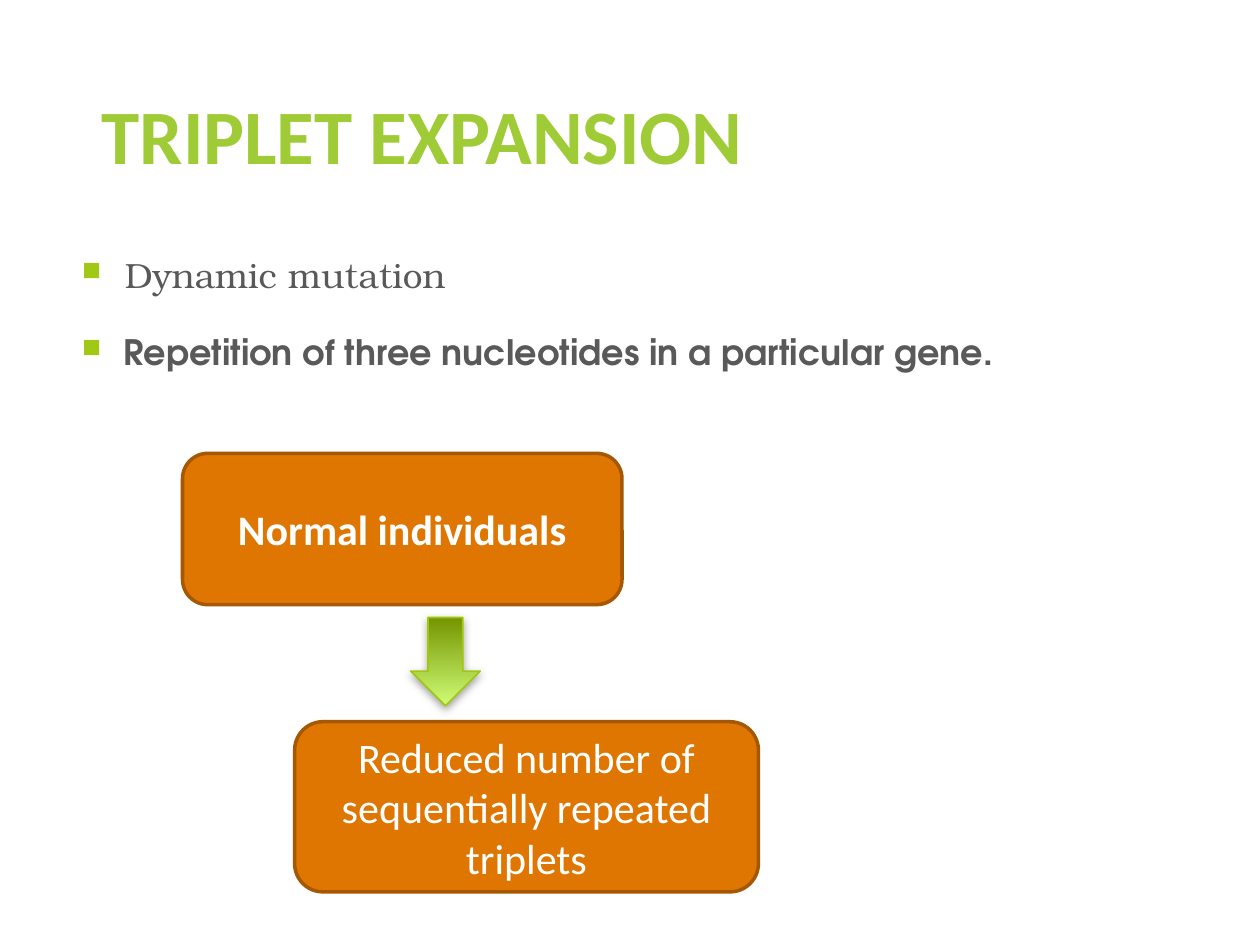
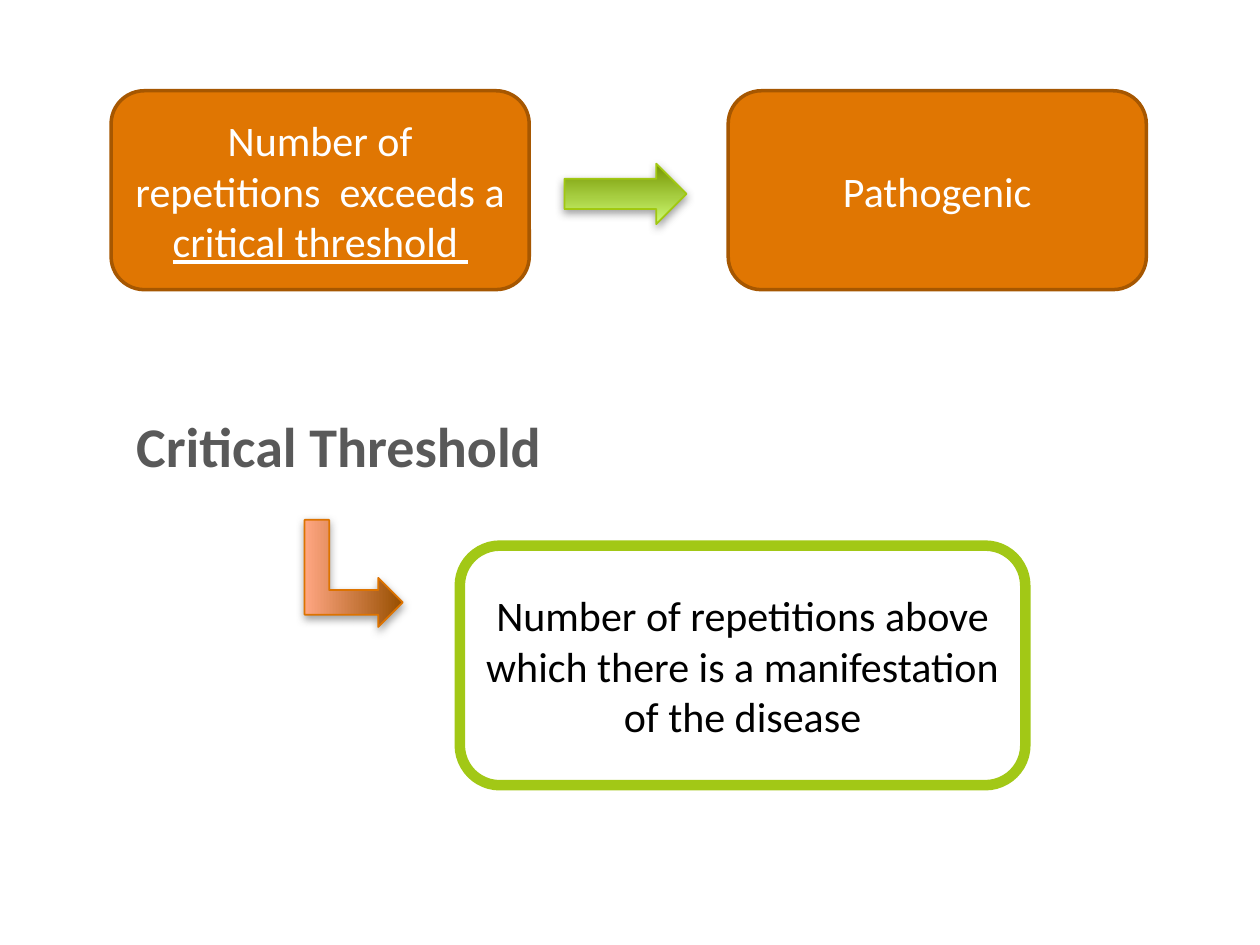
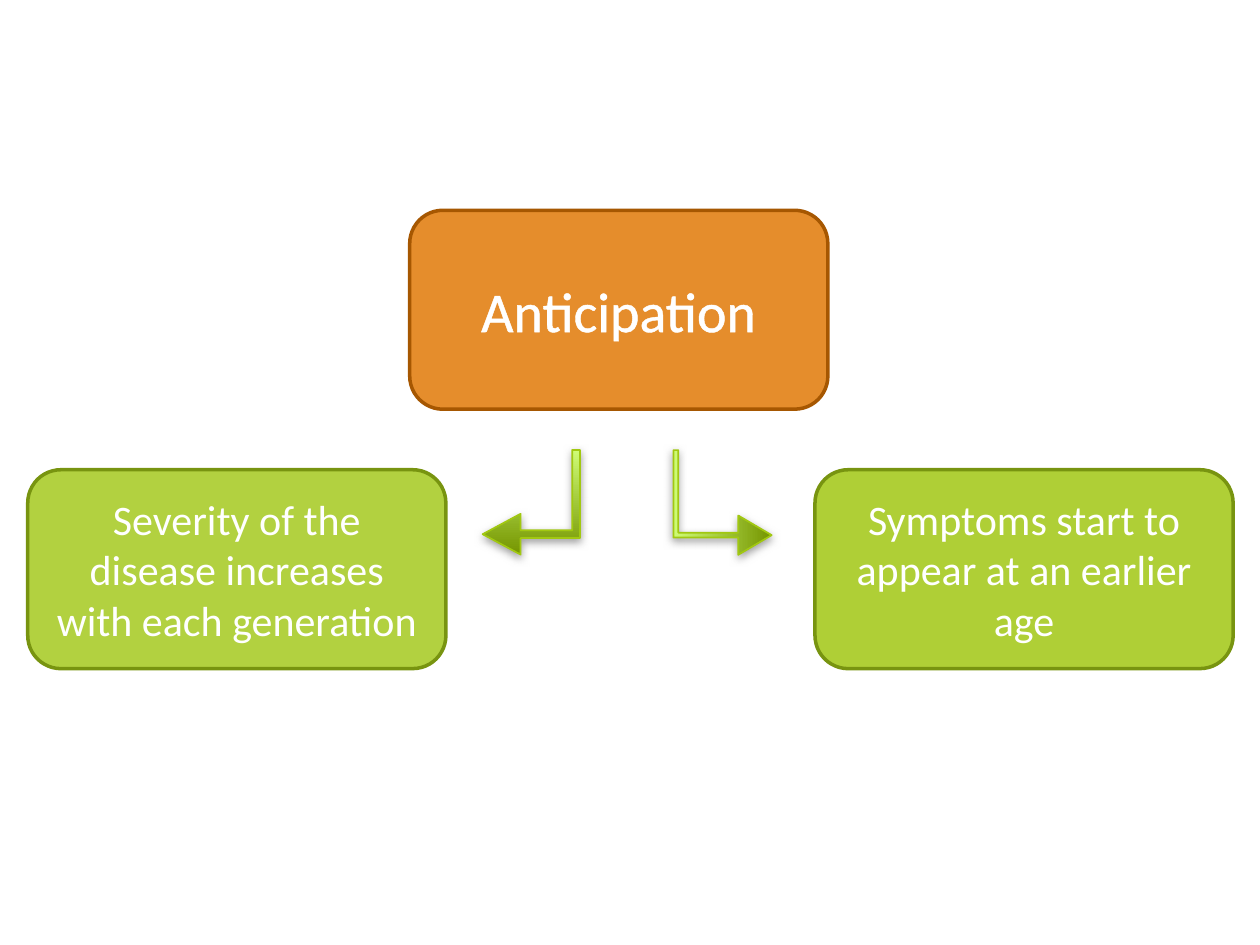
from pptx import Presentation
from pptx.dml.color import RGBColor
from pptx.enum.shapes import MSO_SHAPE
from pptx.enum.text import MSO_ANCHOR, PP_ALIGN
from pptx.oxml.ns import qn
from pptx.util import Cm, Pt
from lxml import etree

ROUND_BOX = MSO_SHAPE.ROUNDED_RECTANGLE
DOWN, RIGHT = MSO_SHAPE.DOWN_ARROW, MSO_SHAPE.RIGHT_ARROW
BENT, BENT_UP = MSO_SHAPE.BENT_ARROW, MSO_SHAPE.BENT_UP_ARROW
CENTER, MIDDLE = PP_ALIGN.CENTER, MSO_ANCHOR.MIDDLE

COLORS = {
    "title": "9FCC36", "body": "595959", "white": "FFFFFF", "black": "000000",
    "orange": "E07602", "orange_edge": "A65701",
    "green": "A2C816", "green_edge": "789410", "shadow": "808080",
}
# Arrow styles: gradient start, gradient end, outline
GREEN_ARROW = ("759500", "CFFC76", "A1C811")
ORANGE_ARROW = ("984F00", "FFA682", "DD7300")

FONT, SERIF, SANS = "Calibri", "TeX Gyre Bonum", "TeX Gyre Adventor"
BOX_W, BOX_H = 8.43, 4.01
TEXT_W = 20.98


def rgb(name):
    return RGBColor.from_string(COLORS.get(name, name))


def sub(parent, tag, **attrs):
    return etree.SubElement(parent, qn(tag), {k: str(v) for k, v in attrs.items()})


def add_run(p, text, size, color, font=FONT, bold=False, underline=False):
    r = p.add_run()
    r.text = text
    r.font.size = Pt(size)
    r.font.name = font
    r.font.bold = bold
    r.font.underline = underline
    r.font.color.rgb = rgb(color)
    return r


def add_text(s, x, y, w, h):
    """Add a wrapping text box and return its text frame."""
    tf = s.shapes.add_textbox(Cm(x), Cm(y), Cm(w), Cm(h)).text_frame
    tf.word_wrap = True
    return tf


def add_bullet(p):
    p.space_before = Pt(20)
    pPr = p._p.get_or_add_pPr()
    pPr.set("marL", str(Cm(0.64)))
    pPr.set("indent", str(Cm(-0.64)))
    sub(sub(pPr, "a:buClr"), "a:srgbClr", val=COLORS["green"])
    sub(pPr, "a:buSzPct", val=75000)
    sub(pPr, "a:buChar", char="■")


def add_box(s, x, y, w=BOX_W, h=BOX_H, fill="orange", edge="orange_edge",
            edge_width=2, opacity=100):
    """Add a rounded box and return its centred paragraph."""
    sp = s.shapes.add_shape(ROUND_BOX, Cm(x), Cm(y), Cm(w), Cm(h))
    sp.shadow.inherit = False
    sp.fill.solid()
    sp.fill.fore_color.rgb = rgb(fill)
    if opacity < 100:
        clr = sp._element.spPr.find(qn("a:solidFill")).find(qn("a:srgbClr"))
        sub(clr, "a:alpha", val=opacity * 1000)
    sp.line.color.rgb = rgb(edge)
    sp.line.width = Pt(edge_width)
    tf = sp.text_frame
    tf.word_wrap = True
    tf.vertical_anchor = MIDDLE
    p = tf.paragraphs[0]
    p.alignment = CENTER
    return p


def add_arrow(s, kind, x, y, w, h, style=GREEN_ARROW, rotation=0, adjustments=()):
    """Add a block arrow with a vertical gradient and a soft shadow."""
    sp = s.shapes.add_shape(kind, Cm(x), Cm(y), Cm(w), Cm(h))
    sp.rotation = rotation
    for i, value in enumerate(adjustments):
        sp.adjustments[i] = value
    start, end, edge = style
    sp.fill.gradient()
    sp.fill.gradient_angle = 270
    for stop, color in zip(sp.fill.gradient_stops, (start, end)):
        stop.color.rgb = rgb(color)
    sp.line.color.rgb = rgb(edge)
    sp.line.width = Pt(1)
    sp.shadow.inherit = False
    effects = sp._element.spPr.find(qn("a:effectLst"))
    shadow = sub(effects, "a:outerShdw", blurRad=Pt(5), dist=Pt(2),
                 dir=5400000, rotWithShape=0)
    sub(sub(shadow, "a:srgbClr", val=COLORS["shadow"]), "a:alpha", val=75000)


def add_outline(r, color, width):
    """Outline the letters of a run."""
    ln = etree.Element(qn("a:ln"), {"w": str(Pt(width))})
    sub(sub(ln, "a:solidFill"), "a:srgbClr", val=COLORS[color])
    r.font._element.insert(0, ln)


def build_expansion(s):
    # Title and bullets
    tf = add_text(s, 1.8, 1.65, TEXT_W, 3.1)
    add_run(tf.paragraphs[0], "TRIPLET EXPANSION", 44, "title", bold=True)

    tf = add_text(s, 1.4, 4.98, TEXT_W, 11.49)
    p = tf.paragraphs[0]
    add_bullet(p)
    add_run(p, " Dynamic mutation", 20, "body", SERIF)
    p = tf.add_paragraph()
    add_bullet(p)
    add_run(p, " Repetition of three nucleotides in a particular gene.",
            20, "body", SANS, bold=True)

    # Normal individuals
    p = add_box(s, 3.68, 9.14, 8.86, 3.05)
    add_run(p, "Normal individuals", 24, "white", bold=True)
    p = add_box(s, 5.94, 14.55, 9.35, 3.43)
    add_run(p, "Reduced number of sequentially repeated triplets", 24, "white")
    add_arrow(s, DOWN, 8.28, 12.45, 1.4, 1.78)


def build_threshold(s):
    # Cause and effect
    p = add_box(s, 2.24, 1.83)
    add_run(p, "Number of repetitions  exceeds a ", 24, "white")
    add_run(p, "critical threshold ", 24, "white", underline=True)
    p = add_box(s, 14.68, 1.83)
    add_run(p, "Pathogenic", 24, "white")
    add_arrow(s, RIGHT, 11.38, 3.3, 2.46, 1.22)

    # Definition
    tf = add_text(s, 2.24, 8.18, TEXT_W, 6.58)
    add_run(tf.paragraphs[0], " Critical Threshold", 32, "body", bold=True)
    add_arrow(s, BENT_UP, 6.05, 10.57, 2.16, 1.98, ORANGE_ARROW, 90)
    p = add_box(s, 9.27, 11, 11.4, 4.83, "white", "green", 6)
    add_run(p, "Number of repetitions above which there is a manifestation "
               "of the disease", 24, "black")


def build_anticipation(s):
    p = add_box(s, 8.26, 4.24, opacity=83)
    add_outline(add_run(p, "Anticipation", 32, "white"), "white", 1.45)

    # Consequences
    for x, opacity, text in (
        (16.43, 86, "Symptoms start to appear at an earlier age"),
        (0.56, 82, "Severity of the disease increases with each generation"),
    ):
        p = add_box(s, x, 9.47, fill="green", edge="green_edge", opacity=opacity)
        add_run(p, text, 24, "white")
    add_arrow(s, BENT_UP, 13.51, 9.14, 2.11, 1.98, rotation=90,
              adjustments=(0.05, 0.2, 0.34))
    add_arrow(s, BENT, 9.73, 9.07, 1.96, 2.11, rotation=180,
              adjustments=(0.08, 0.21, 0.39, 0))


def main():
    prs = Presentation()
    prs.slide_width, prs.slide_height = Cm(25.4), Cm(19.05)
    blank = prs.slide_layouts[6]
    for build in (build_expansion, build_threshold, build_anticipation):
        build(prs.slides.add_slide(blank))
    prs.save("out.pptx")


if __name__ == "__main__":
    main()
